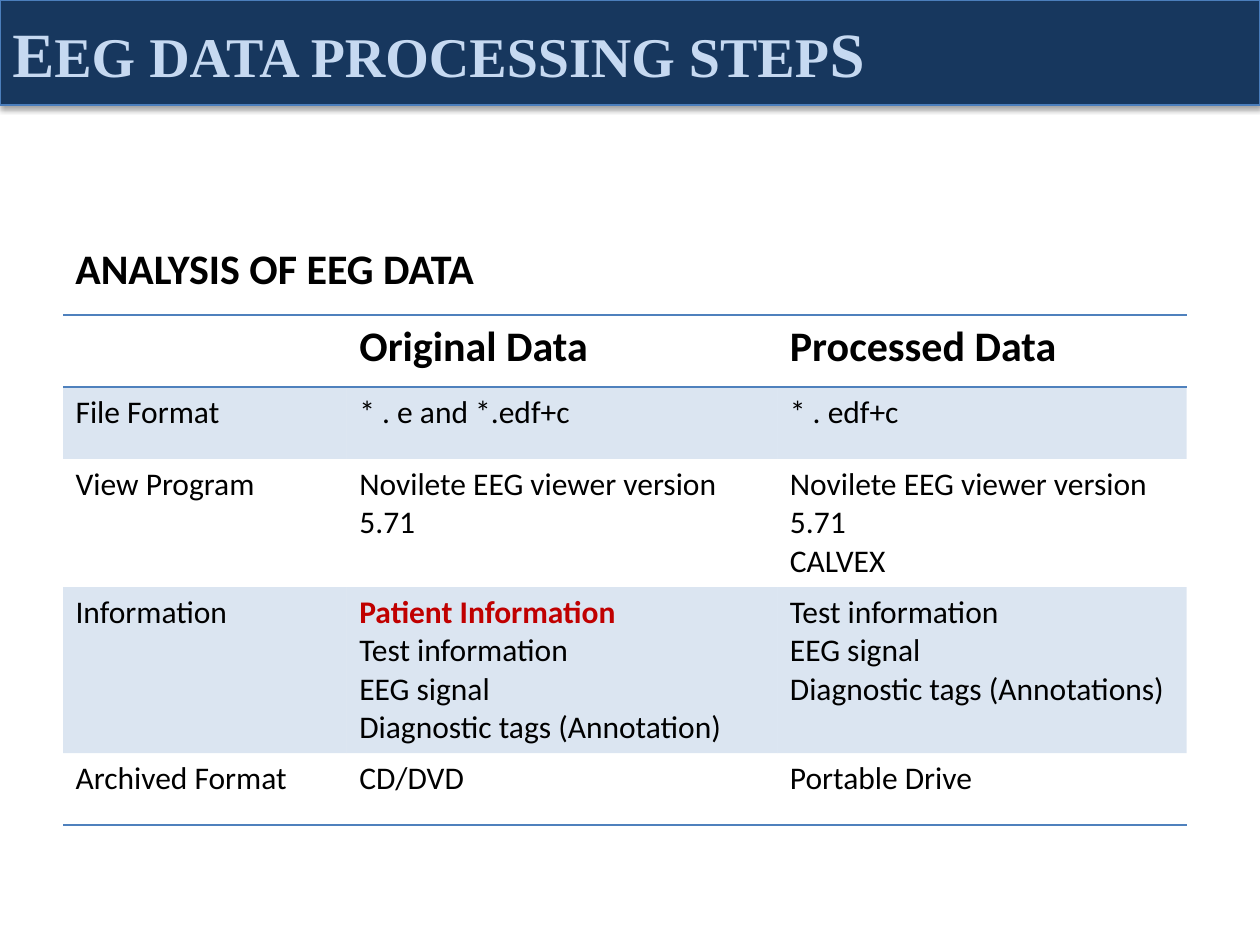
from lxml import etree
from pptx import Presentation
from pptx import util as u
from pptx.dml.color import RGBColor
from pptx.enum import shapes, text
from pptx.oxml import ns

NAVY = RGBColor(0x17, 0x37, 0x5E)
PALE = RGBColor(0xC6, 0xD9, 0xF1)
EDGE = RGBColor(0x4B, 0x7E, 0xBC)
BLUE = RGBColor(0x4F, 0x81, 0xBD)
RED = RGBColor(0xC0, 0x00, 0x00)
BLACK = RGBColor(0, 0, 0)

NO_STYLE = "{2D5ABB26-0587-4C30-8999-92F81FD0307C}"
VIEWER = "Novilete EEG viewer version 5.71"
ALERT = "Patient Information"
ROWS = [
    [[], ["Original Data"], ["Processed Data"]],
    [["File Format"], ["* . e and *.edf+c"], ["* . edf+c"]],
    [["View Program"], [VIEWER], [VIEWER, "CALVEX"]],
    [["Information"],
     [ALERT, "Test information", "EEG signal", "Diagnostic tags (Annotation)"],
     ["Test information", "EEG signal", "Diagnostic tags (Annotations)"]],
    [["Archived Format"], ["CD/DVD"], ["Portable Drive"]],
]
WIDTHS = (5.72, 8.68, 8.25)
HEIGHT = 1.45


def sub(node, tag, **attrs):
    return etree.SubElement(node, ns.qn(tag), attrs)


def add_run(para, words, size, color=BLACK, bold=False, face="Calibri"):
    run = para.add_run()
    run.text = words
    font = run.font
    font.size, font.bold, font.name = u.Pt(size), bold, face
    font.color.rgb = color


def add_shade(shape):
    shape.shadow.inherit = False
    effect = shape._element.spPr.find(ns.qn("a:effectLst"))
    outer = sub(effect, "a:outerShdw", blurRad="40000", dist="23000",
                dir="5400000", rotWithShape="0")
    sub(sub(outer, "a:srgbClr", val="000000"), "a:alpha", val="35000")


def add_title(slide):
    bar = slide.shapes.add_shape(shapes.MSO_SHAPE.RECTANGLE, 0, 0,
                                 u.Cm(25.4), u.Cm(2.12))
    bar.fill.solid()
    bar.fill.fore_color.rgb = NAVY
    bar.line.color.rgb = EDGE
    bar.line.width = u.Pt(0.75)
    add_shade(bar)
    frame = bar.text_frame
    frame.vertical_anchor = text.MSO_ANCHOR.MIDDLE
    para = frame.paragraphs[0]
    para.alignment = text.PP_ALIGN.LEFT
    for words, size in (("E", 36), ("EG DATA PROCESSING STEP", 32), ("S", 36)):
        add_run(para, words, size, PALE, True, "Times New Roman")


def add_head(slide):
    box = slide.shapes.add_textbox(u.Cm(1.27), u.Cm(4.26), u.Cm(11.23), u.Cm(1.78))
    frame = box.text_frame
    frame.word_wrap = True
    frame.vertical_anchor = text.MSO_ANCHOR.BOTTOM
    add_run(frame.paragraphs[0], "ANALYSIS OF EEG DATA", 24, bold=True)


def add_rule(cell, side):
    line = sub(cell._tc.get_or_add_tcPr(), "a:" + side, w="12700")
    sub(sub(line, "a:solidFill"), "a:srgbClr", val=str(BLUE))


def fill_cell(cell, lines, row):
    # Rules come before the fill in the cell properties
    sides = {0: ("lnT", "lnB"), len(ROWS) - 1: ("lnB",)}
    for side in sides.get(row, ()):
        add_rule(cell, side)
    cell.margin_bottom = u.Cm(0.17)
    if row % 2:
        cell.fill.solid()
        cell.fill.fore_color.rgb = BLUE
        tint = cell._tc.tcPr.find(".//" + ns.qn("a:srgbClr"))
        sub(tint, "a:alpha", val="20000")
    else:
        cell.fill.background()
    frame = cell.text_frame
    for i, words in enumerate(lines):
        para = frame.add_paragraph() if i else frame.paragraphs[0]
        alert = words == ALERT
        add_run(para, words, 18 if row else 24, RED if alert else BLACK,
                alert or row == 0)


def add_grid(slide):
    frame = slide.shapes.add_table(len(ROWS), len(WIDTHS), u.Cm(1.27), u.Cm(6.35),
                                   u.Cm(sum(WIDTHS)), u.Cm(HEIGHT * len(ROWS)))
    table = frame.table
    table._tbl.tblPr.find(ns.qn("a:tableStyleId")).text = NO_STYLE
    for col, width in zip(table.columns, WIDTHS):
        col.width = u.Cm(width)
    for r, row in enumerate(ROWS):
        table.rows[r].height = u.Cm(HEIGHT)
        for c, lines in enumerate(row):
            fill_cell(table.cell(r, c), lines, r)


def main():
    deck = Presentation()
    deck.slide_width, deck.slide_height = u.Cm(25.4), u.Cm(19.05)
    slide = deck.slides.add_slide(deck.slide_layouts[6])
    # Title bar
    add_title(slide)
    # Heading and comparison table
    add_head(slide)
    add_grid(slide)
    deck.save("out.pptx")


if __name__ == "__main__":
    main()
